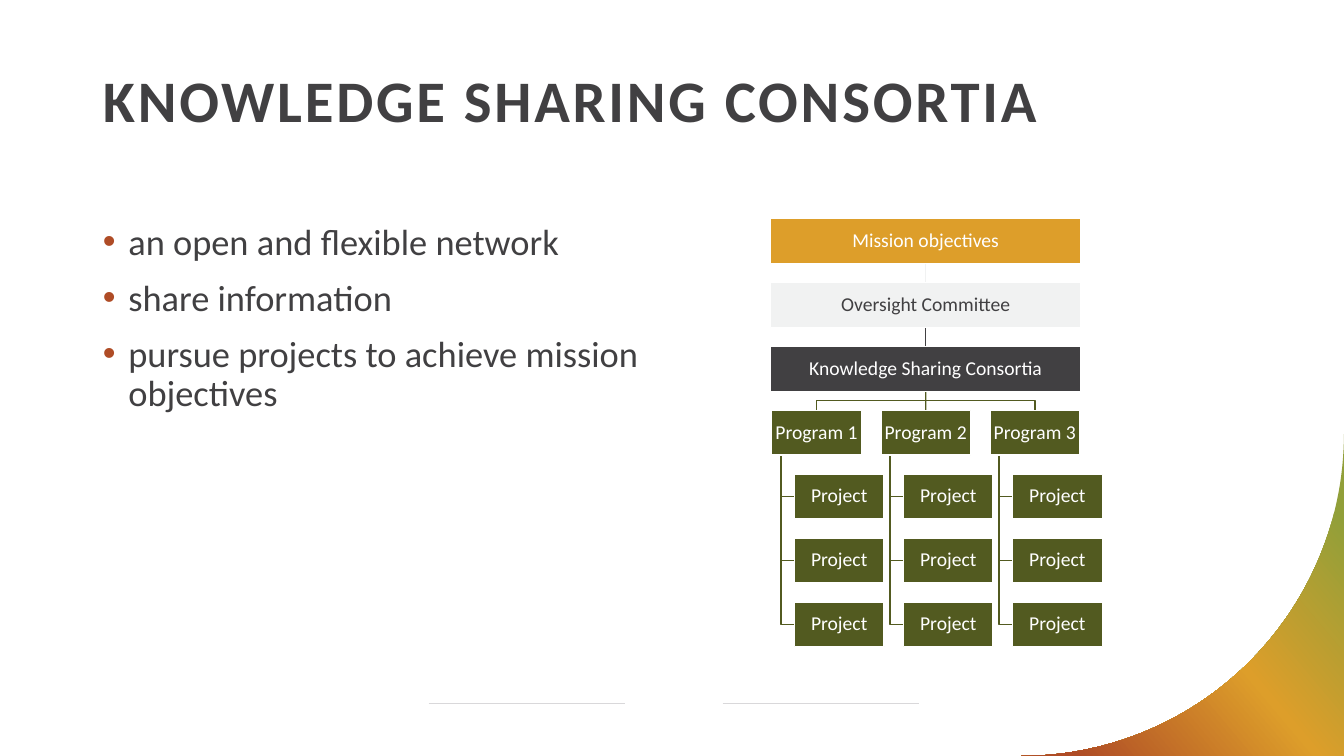
from copy import deepcopy
from dataclasses import dataclass
from math import cos, pi, sin
from typing import Optional

from lxml.etree import SubElement
from pptx import Presentation
from pptx.dml.color import RGBColor
from pptx.enum.shapes import MSO_CONNECTOR, MSO_SHAPE
from pptx.enum.text import MSO_ANCHOR, MSO_AUTO_SIZE, PP_ALIGN
from pptx.oxml.ns import qn
from pptx.shapes.autoshape import Shape
from pptx.shapes.connector import Connector
from pptx.slide import Slide
from pptx.text.text import TextFrame
from pptx.util import Cm, Pt

FONT = "Calibri"
WHITE = RGBColor(0xFF, 0xFF, 0xFF)
DARK = RGBColor(0x41, 0x40, 0x42)
PALE = RGBColor(0xF1, 0xF2, 0xF2)
RULE = RGBColor(0xD9, 0xD8, 0xDA)
ORANGE = RGBColor(0xDD, 0x9E, 0x2A)
RUST = RGBColor(0xAF, 0x4C, 0x26)
GREEN = RGBColor(0x91, 0x9F, 0x39)
OLIVE = RGBColor(0x52, 0x5A, 0x20)

# Chart grid, in centimetres
TOP, ROW_PITCH, BOX_H = 5.51, 1.61, 1.13
BAR_LEFT, BAR_W = 19.42, 7.82
PROGRAM_LEFT, COLUMN_PITCH, BOX_W = 19.45, 2.75, 2.26
PROJECT_INDENT, TRUNK_INDENT = 0.57, 0.23
PROGRAM_ROW, PROJECT_ROWS = 3, (4, 5, 6)


@dataclass
class Bar:
    text: str
    fill: RGBColor
    color: RGBColor
    link: Optional[RGBColor] = None  # line down to the next bar


BARS = [
    Bar("Mission objectives", ORANGE, WHITE, PALE),
    Bar("Oversight Committee", PALE, DARK, DARK),
    Bar("Knowledge Sharing Consortia", DARK, WHITE),
]
PROGRAMS = ["Program 1", "Program 2", "Program 3"]
BULLETS = [
    "an open and flexible network",
    "share information",
    "pursue projects to achieve mission objectives",
]


def write_text(tf: TextFrame, *lines: str, size: float, color: RGBColor = DARK,
               bold: bool = False, align: PP_ALIGN = PP_ALIGN.LEFT,
               anchor: MSO_ANCHOR = MSO_ANCHOR.TOP, after: float = 0,
               spacing: float = 0, bullet: Optional[RGBColor] = None) -> None:
    tf.word_wrap = True
    tf.auto_size = MSO_AUTO_SIZE.NONE
    tf.vertical_anchor = anchor
    for i, line in enumerate(lines):
        p = tf.add_paragraph() if i else tf.paragraphs[0]
        if bullet is not None:
            pPr = p._p.get_or_add_pPr()
            pPr.set("marL", str(Cm(0.64)))
            pPr.set("indent", str(Cm(-0.64)))
            clr = SubElement(pPr, qn("a:buClr"))
            SubElement(clr, qn("a:srgbClr"), val=str(bullet))
            SubElement(pPr, qn("a:buFont"), typeface="Arial")
            SubElement(pPr, qn("a:buChar"), char="•")
        p.alignment = align
        p.line_spacing = 0.9
        p.space_before = Pt(0)
        p.space_after = Pt(after)
        r = p.add_run()
        r.text = line
        r.font.name = FONT
        r.font.size = Pt(size)
        r.font.bold = bold
        r.font.color.rgb = color
        if spacing:
            r._r.get_or_add_rPr().set("spc", str(int(spacing * 100)))


def place(sp: Shape, left: float, top: float, width: float, height: float) -> None:
    sp.left, sp.top, sp.width, sp.height = Cm(left), Cm(top), Cm(width), Cm(height)


def row_top(row: int) -> float:
    return TOP + row * ROW_PITCH


def add_box(slide: Slide, text: str, left: float, row: int, width: float = BOX_W,
            fill: RGBColor = OLIVE, color: RGBColor = WHITE) -> Shape:
    sp = slide.shapes.add_shape(MSO_SHAPE.RECTANGLE, Cm(left), Cm(row_top(row)),
                                Cm(width), Cm(BOX_H))
    sp.shadow.inherit = False
    sp.fill.solid()
    sp.fill.fore_color.rgb = fill
    sp.line.color.rgb = WHITE
    sp.line.width = Pt(1)
    tf = sp.text_frame
    tf.margin_left = tf.margin_right = tf.margin_top = tf.margin_bottom = Cm(0.03)
    write_text(tf, text, size=14, color=color, align=PP_ALIGN.CENTER,
               anchor=MSO_ANCHOR.MIDDLE)
    return sp


def add_line(slide: Slide, x1: float, y1: float, x2: float, y2: float,
             color: RGBColor, width: float = 1) -> Connector:
    line = slide.shapes.add_connector(MSO_CONNECTOR.STRAIGHT,
                                      Cm(x1), Cm(y1), Cm(x2), Cm(y2))
    line.line.color.rgb = color
    line.line.width = Pt(width)
    SubElement(line.element.spPr, qn("a:effectLst"))
    return line


def link_down(slide: Slide, upper: Shape, lower: Shape, color: RGBColor) -> Connector:
    line = add_line(slide, 0, 0, 1, 1, color)
    line.begin_connect(upper, 2)
    line.end_connect(lower, 0)
    return line


def add_outline(slide: Slide, points: list[tuple[float, float]],
                close: bool = False) -> Shape:
    (x, y), *rest = [(Cm(px), Cm(py)) for px, py in points]
    builder = slide.shapes.build_freeform(x, y)
    builder.add_line_segments(rest, close=close)
    sp = builder.convert_to_shape()
    sp.shadow.inherit = False
    return sp


def add_bent_link(slide: Slide, points: list[tuple[float, float]]) -> Shape:
    sp = add_outline(slide, points)
    sp.fill.background()
    sp.line.color.rgb = OLIVE
    sp.line.width = Pt(1)
    return sp


def add_decoration(slide: Slide) -> None:
    for left in (10.8, 18.21):
        add_line(slide, left, 17.73, left + 4.95, 17.73, RULE, 0.5)
    cx, cy, radius, steps = 25.75, 10.93, 8.12, 60
    angles = [pi / 2 * i / steps for i in range(steps + 1)]
    arc = [(cx + radius * cos(a), cy + radius * sin(a)) for a in angles]
    corner = add_outline(slide, arc + [(cx + radius, cy + radius)], close=True)
    corner.line.fill.background()
    corner.fill.gradient()
    corner.fill.gradient_angle = 220
    stops = corner.element.spPr.find(".//" + qn("a:gsLst"))
    stops.append(deepcopy(stops[0]))
    colors = ((0.12, GREEN), (0.5, ORANGE), (0.91, RUST))
    for stop, (position, color) in zip(corner.fill.gradient_stops, colors):
        stop.position = position
        stop.color.rgb = color


def add_organisation_chart(slide: Slide) -> None:
    bars = [add_box(slide, b.text, BAR_LEFT, row, BAR_W, b.fill, b.color)
            for row, b in enumerate(BARS)]
    links = [link_down(slide, bars[i], bars[i + 1], b.link)
             for i, b in enumerate(BARS) if b.link is not None]
    center = BAR_LEFT + BAR_W / 2
    bar_bottom, program_top = row_top(PROGRAM_ROW - 1) + BOX_H, row_top(PROGRAM_ROW)
    middle = (bar_bottom + program_top) / 2
    for column, name in enumerate(PROGRAMS):
        left = PROGRAM_LEFT + column * COLUMN_PITCH
        program = add_box(slide, name, left, PROGRAM_ROW)
        if column == 1:
            links.append(link_down(slide, bars[-1], program, OLIVE))
        else:
            x = left + BOX_W / 2
            links.append(add_bent_link(slide, [(center, bar_bottom), (center, middle),
                                               (x, middle), (x, program_top)]))
        trunk, project_left = left + TRUNK_INDENT, left + PROJECT_INDENT
        for row in PROJECT_ROWS:
            add_box(slide, "Project", project_left, row)
            y = row_top(row) + BOX_H / 2
            links.append(add_bent_link(slide, [(trunk, program_top + BOX_H),
                                               (trunk, y), (project_left, y)]))
    # Links lie behind the boxes
    for link in links:
        bars[0].element.addprevious(link.element)


def main() -> None:
    prs = Presentation()
    prs.slide_width, prs.slide_height = Cm(33.87), Cm(19.05)
    slide = prs.slides.add_slide(prs.slide_layouts[1])
    title, body = slide.shapes.title, slide.placeholders[1]
    place(title, 2.34, 1.68, 29.21, 2.26)
    write_text(title.text_frame, "KNOWLEDGE SHARING CONSORTIA", size=42, bold=True,
               spacing=2)
    place(body, 2.34, 5.51, 15.37, 10.8)
    write_text(body.text_frame, *BULLETS, size=26, after=12, bullet=RUST)
    add_decoration(slide)
    add_organisation_chart(slide)
    prs.save("out.pptx")


if __name__ == "__main__":
    main()
